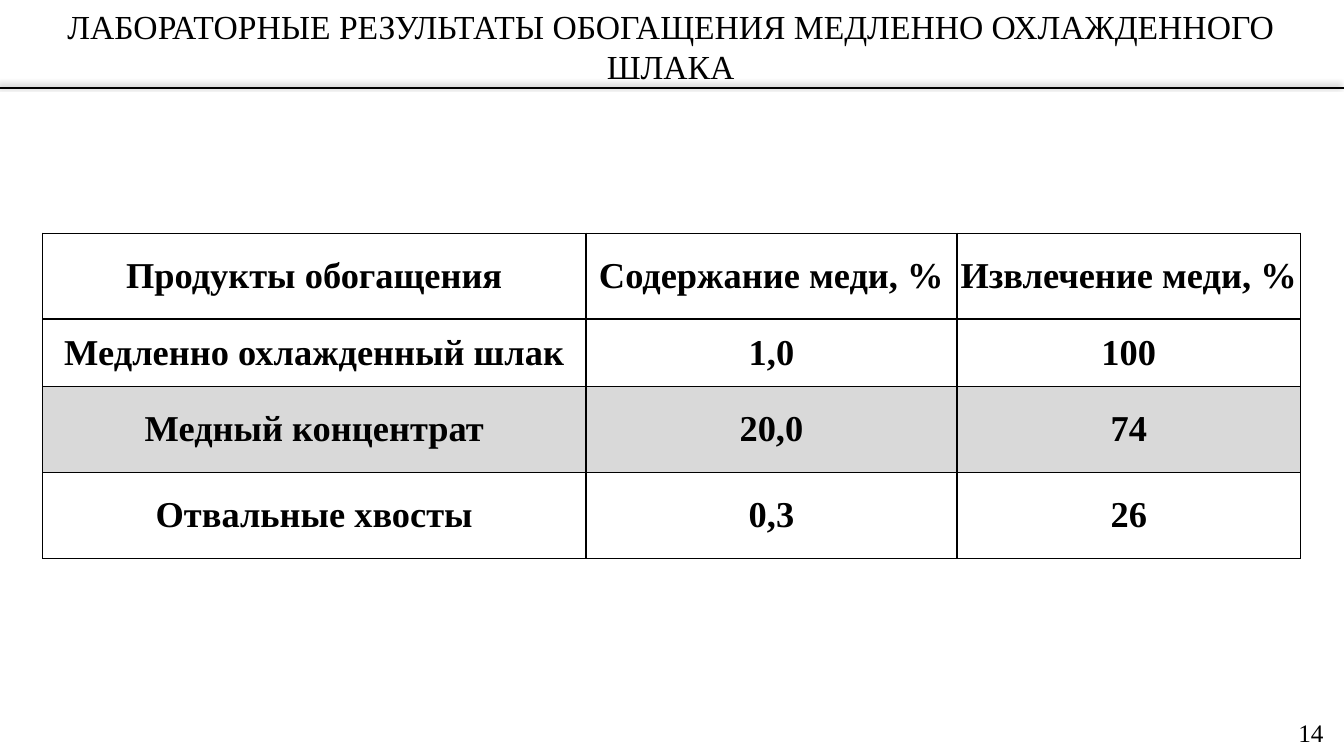
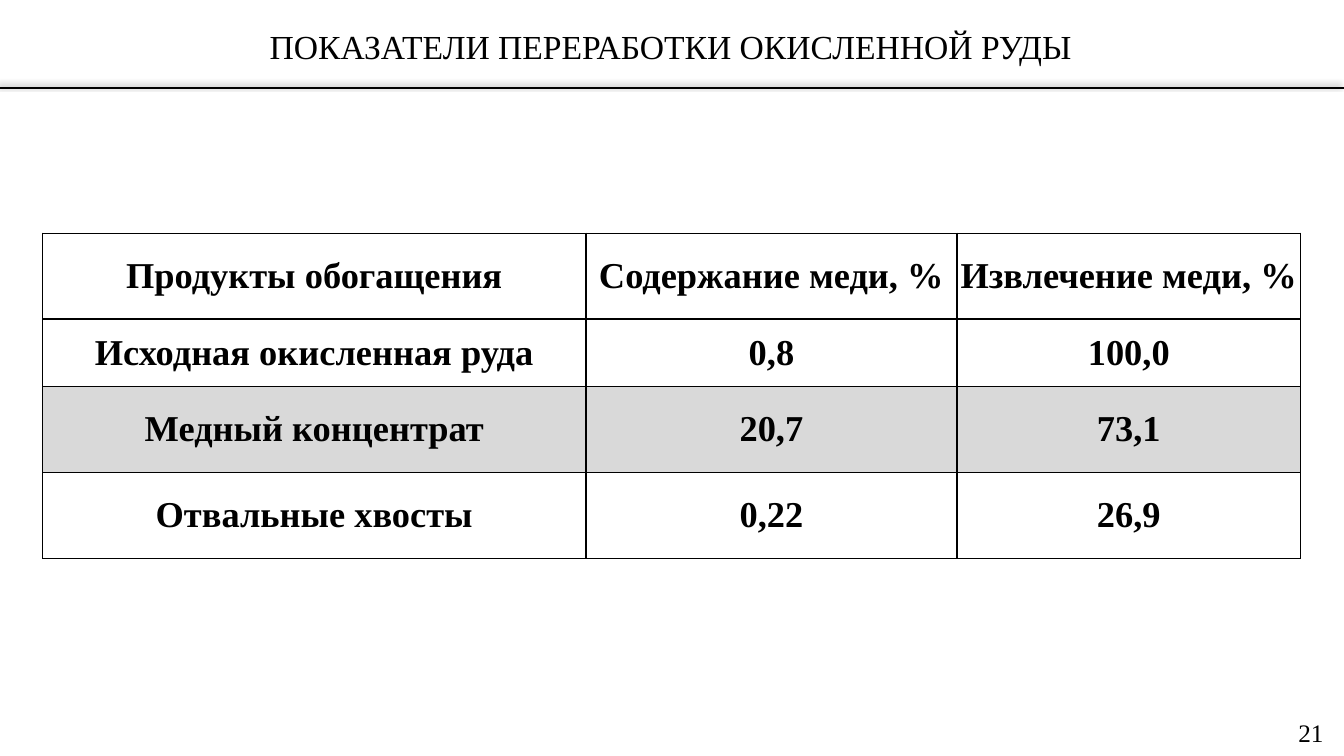
from dataclasses import dataclass

from lxml import etree
from pptx import Presentation
from pptx import oxml
from pptx.dml.color import RGBColor
from pptx.enum import shapes, text
from pptx.oxml import ns
from pptx.util import Pt


@dataclass(frozen=True)
class Theme:
    font: str = "Times New Roman"
    ink: str = "000000"
    paper: str = "FFFFFF"
    highlight: str = "D9D9D9"
    title_size: int = 24
    table_size: int = 26
    number_size: int = 18
    rule_width: float = 1.5
    border_width: float = 1


THEME = Theme()
WIDTH, HEIGHT = 960, 540
RULE_TOP = 62.8
TITLE_BOX = (13, 0, 932, 66)
NUMBER_BOX = (911.5, 508.5, 41, 29)
TABLE_LEFT, TABLE_TOP = 30.6, 166.5
COLUMN_WIDTHS = (388, 265, 245.5)
ROW_HEIGHTS = (61.4, 48.2, 61.4, 61.4)
HIGHLIGHT_ROW = 2
HEADER = ("Продукты обогащения", "Содержание меди, %", "Извлечение меди, %")

SLIDES = (
    (
        "ЛАБОРАТОРНЫЕ РЕЗУЛЬТАТЫ ОБОГАЩЕНИЯ МЕДЛЕННО ОХЛАЖДЕННОГО ШЛАКА",
        (
            HEADER,
            ("Медленно охлажденный шлак", "1,0", "100"),
            ("Медный концентрат", "20,0", "74"),
            ("Отвальные хвосты", "0,3", "26"),
        ),
        14,
    ),
    (
        "ПОКАЗАТЕЛИ ПЕРЕРАБОТКИ ОКИСЛЕННОЙ РУДЫ",
        (
            HEADER,
            ("Исходная окисленная руда", "0,8", "100,0"),
            ("Медный концентрат", "20,7", "73,1"),
            ("Отвальные хвосты", "0,22", "26,9"),
        ),
        21,
    ),
)


def points(values):
    return [Pt(value) for value in values]


def write_text(frame, content, *, size, bold=False,
               align=text.PP_ALIGN.CENTER, color=THEME.ink):
    paragraph = frame.paragraphs[0]
    paragraph.alignment = align
    paragraph.line_spacing = 1.0
    run = paragraph.add_run()
    run.text = content
    run.font.name = THEME.font
    run.font.size = Pt(size)
    run.font.bold = bold
    run.font.color.rgb = RGBColor.from_string(color)


def add_shadow(line):
    """Give a connector a soft shadow up and to the left."""
    line._element.spPr.append(oxml.parse_xml(
        f'<a:effectLst {ns.nsdecls("a")}>'
        f'<a:outerShdw blurRad="{Pt(4)}" dist="{Pt(3)}" dir="13500000" rotWithShape="0">'
        f'<a:srgbClr val="{THEME.ink}"><a:alpha val="40000"/></a:srgbClr>'
        '</a:outerShdw></a:effectLst>'
    ))


def add_borders(cell):
    """Outline all four sides; borders must precede the fill in the XML."""
    properties = cell._tc.get_or_add_tcPr()
    for index, side in enumerate(("lnL", "lnR", "lnT", "lnB")):
        border = etree.Element(ns.qn(f"a:{side}"), w=str(Pt(THEME.border_width)))
        fill = etree.SubElement(border, ns.qn("a:solidFill"))
        etree.SubElement(fill, ns.qn("a:srgbClr"), val=THEME.ink)
        properties.insert(index, border)


class Deck:
    """Holds the presentation, its theme and the current slide."""

    def __init__(self, theme):
        self.theme = theme
        self.presentation = Presentation()
        self.presentation.slide_width = Pt(WIDTH)
        self.presentation.slide_height = Pt(HEIGHT)
        self.slide = None

    def add_slide(self):
        layout = self.presentation.slide_layouts.get_by_name("Title Only")
        self.slide = self.presentation.slides.add_slide(layout)

    def add_title(self, content):
        title = self.slide.shapes.title
        title.left, title.top, title.width, title.height = points(TITLE_BOX)
        frame = title.text_frame
        frame.auto_size = text.MSO_AUTO_SIZE.NONE
        frame.vertical_anchor = text.MSO_ANCHOR.MIDDLE
        write_text(frame, content, size=self.theme.title_size)

    def add_rule(self):
        line = self.slide.shapes.add_connector(
            shapes.MSO_CONNECTOR.STRAIGHT,
            *points((0, RULE_TOP, WIDTH, RULE_TOP)))
        line.line.color.rgb = RGBColor.from_string(self.theme.ink)
        line.line.width = Pt(self.theme.rule_width)
        add_shadow(line)

    def add_table(self, rows):
        box = (TABLE_LEFT, TABLE_TOP, sum(COLUMN_WIDTHS), sum(ROW_HEIGHTS))
        table = self.slide.shapes.add_table(
            len(rows), len(COLUMN_WIDTHS), *points(box)).table
        table.first_row = table.horz_banding = False
        for column, width in zip(table.columns, COLUMN_WIDTHS):
            column.width = Pt(width)
        for row, height in zip(table.rows, ROW_HEIGHTS):
            row.height = Pt(height)
        for row_index, row in enumerate(rows):
            highlighted = row_index == HIGHLIGHT_ROW
            fill = self.theme.highlight if highlighted else self.theme.paper
            for column_index, content in enumerate(row):
                self.format_cell(table.cell(row_index, column_index), content, fill)

    def format_cell(self, cell, content, fill):
        cell.margin_left = cell.margin_right = Pt(1.4)
        cell.margin_top = cell.margin_bottom = 0
        cell.vertical_anchor = text.MSO_ANCHOR.MIDDLE
        cell.fill.solid()
        cell.fill.fore_color.rgb = RGBColor.from_string(fill)
        add_borders(cell)
        write_text(cell.text_frame, content, size=self.theme.table_size, bold=True)

    def add_number(self, number):
        frame = self.slide.shapes.add_textbox(*points(NUMBER_BOX)).text_frame
        frame.word_wrap = True
        write_text(frame, str(number), size=self.theme.number_size,
                   align=text.PP_ALIGN.RIGHT)


def main():
    deck = Deck(THEME)
    for title, rows, number in SLIDES:
        deck.add_slide()
        deck.add_rule()
        deck.add_title(title)
        deck.add_table(rows)
        deck.add_number(number)
    deck.presentation.save("out.pptx")


if __name__ == "__main__":
    main()
